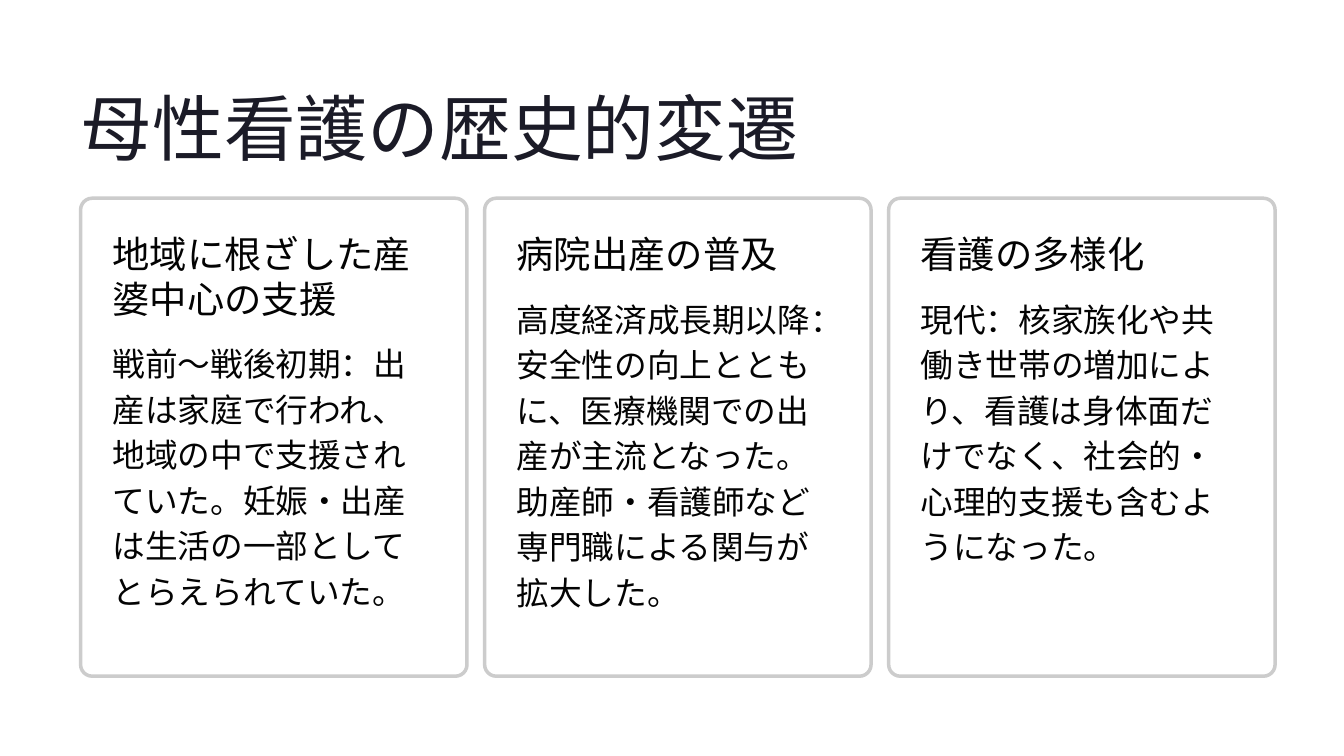
import pptx
import pptx.util
import pptx.dml.color
import pptx.enum.shapes
import pptx.enum.text
import pptx.oxml.ns
from lxml import etree
from pptx.util import Inches

HEAD_FONT, BODY_FONT = "Inter", "Cabin"
TITLE_INK, INK, WHITE, BORDER = "1B1B27", "030303", "FFFFFF", "CCCCCC"
LEFT, CARD_TOP, CARD_W, CARD_H, GAP, PAD = 0.96, 2.36, 4.6, 5.69, 0.21, 0.38

# Heading, heading height, body top, body height, body text
CARDS = [
    ("地域に根ざした産婆中心の支援", 1.14, 4.02, 3.5,
     "戦前～戦後初期：出産は家庭で行われ、地域の中で支援されていた。"
     "妊娠・出産は生活の一部としてとらえられていた。"),
    ("病院出産の普及", 0.57, 3.49, 4.08,
     "高度経済成長期以降：安全性の向上とともに、医療機関での出産が主流となった。"
     "助産師・看護師など専門職による関与が拡大した。"),
    ("看護の多様化", 0.57, 3.49, 3.5,
     "現代：核家族化や共働き世帯の増加により、看護は身体面だけでなく、"
     "社会的・心理的支援も含むようになった。"),
]


def rgb(value):
    return pptx.dml.color.RGBColor.from_string(value)


class Deck:
    def __init__(self, width, height):
        self.prs = pptx.Presentation()
        self.prs.slide_width = Inches(width)
        self.prs.slide_height = Inches(height)
        self.s = self.prs.slides.add_slide(self.prs.slide_layouts[5])

    def fill_text(self, sp, text, font, size, color, spacing, wrap=True):
        tf = sp.text_frame
        tf.margin_left = tf.margin_right = tf.margin_top = tf.margin_bottom = 0
        tf.auto_size = pptx.enum.text.MSO_AUTO_SIZE.NONE
        tf.vertical_anchor = pptx.enum.text.MSO_ANCHOR.TOP
        tf.word_wrap = wrap
        p = tf.paragraphs[0]
        p.alignment = pptx.enum.text.PP_ALIGN.LEFT
        p.line_spacing = pptx.util.Pt(spacing)
        r = p.add_run()
        r.text = text
        r.font.name, r.font.size = font, pptx.util.Pt(size)
        r.font.color.rgb = rgb(color)

    def title(self, x, y, w, h, text):
        sp = self.s.shapes.title
        sp.left, sp.top, sp.width, sp.height = map(Inches, (x, y, w, h))
        self.fill_text(sp, text, HEAD_FONT, 61.5, TITLE_INK, 77, wrap=False)

    def text(self, x, y, w, h, text, font, size, spacing):
        sp = self.s.shapes.add_textbox(*map(Inches, (x, y, w, h)))
        self.fill_text(sp, text, font, size, INK, spacing)

    def panel(self, x, y, w, h):
        sp = self.s.shapes.add_shape(
            pptx.enum.shapes.MSO_SHAPE.ROUNDED_RECTANGLE,
            *map(Inches, (x, y, w, h)))
        sp.adjustments[0] = 0.03
        sp.shadow.inherit = False
        sp.fill.solid()
        sp.fill.fore_color.rgb = rgb(WHITE)
        # 95 % opacity
        clr = sp.element.spPr.find(".//" + pptx.oxml.ns.qn("a:srgbClr"))
        etree.SubElement(clr, pptx.oxml.ns.qn("a:alpha")).set("val", "95000")
        sp.line.color.rgb = rgb(BORDER)
        sp.line.width = pptx.util.Pt(3)


def main():
    deck = Deck(16, 9)

    # Title
    deck.title(LEFT, 0.95, 8.57, 1.07, "母性看護の歴史的変遷")

    # One card per period
    for i, (heading, head_h, body_top, body_h, body) in enumerate(CARDS):
        x = LEFT + i * (CARD_W + GAP)
        deck.panel(x, CARD_TOP, CARD_W, CARD_H)
        deck.text(x + PAD, 2.75, 3.8, head_h, heading, HEAD_FONT, 32, 38.5)
        deck.text(x + PAD, body_top, 3.8, body_h, body, BODY_FONT, 28, 39)

    deck.prs.save("out.pptx")


if __name__ == "__main__":
    main()
